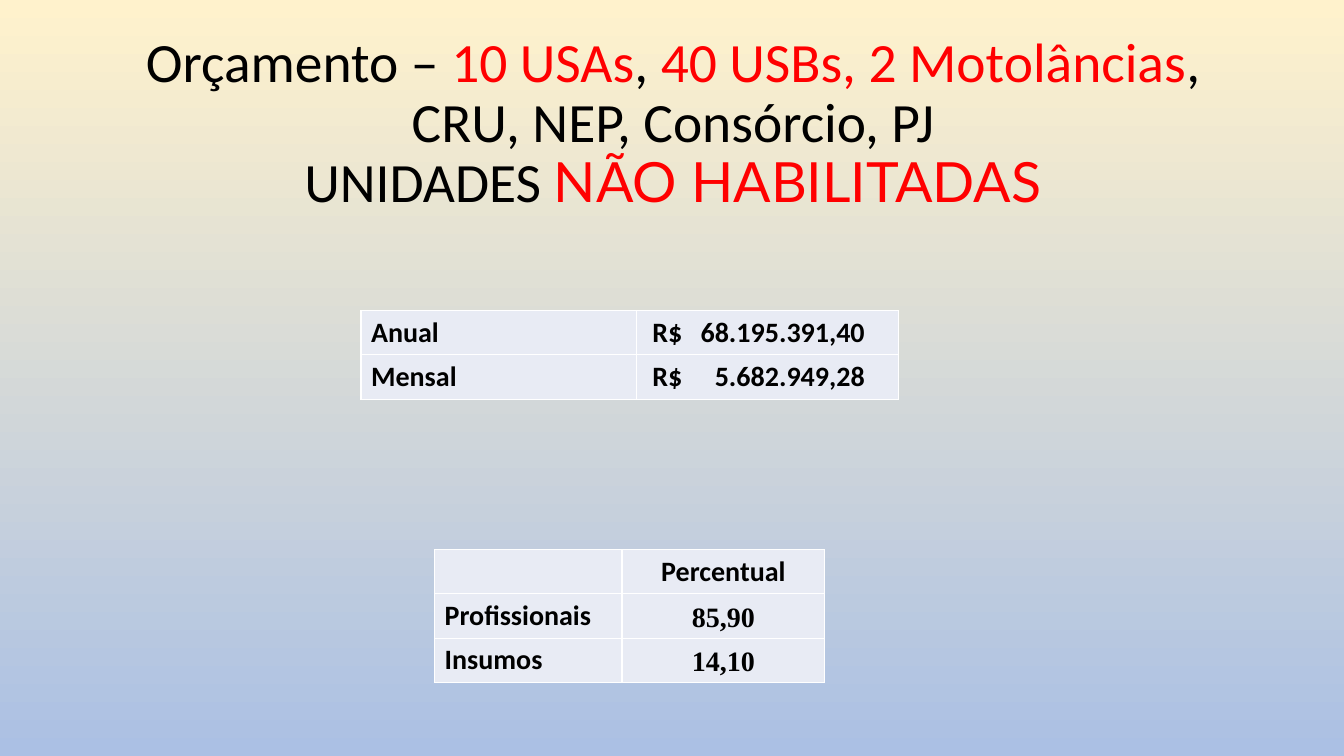
from lxml.etree import SubElement
from pptx import Presentation
from pptx.dml.color import RGBColor
from pptx.enum.text import MSO_ANCHOR, MSO_AUTO_SIZE, PP_ALIGN
from pptx.oxml.ns import qn
from pptx.util import Inches, Pt

BLACK = RGBColor(0x00, 0x00, 0x00)
RED = RGBColor(0xFF, 0x00, 0x00)
WHITE = RGBColor(0xFF, 0xFF, 0xFF)
CELL_FILL = RGBColor(0xE8, 0xEB, 0xF4)
SKY = RGBColor(0xFF, 0xF2, 0xCC)
GROUND = RGBColor(0xAB, 0xC0, 0xE4)

ROW_HEIGHT = 0.44
CURRENCY_INSET = 0.16
AMOUNT_STOP = 2.11


def add_text(paragraph, text, size=20, font="Calibri", color=BLACK, bold=False):
    """Append one formatted run to a paragraph."""
    run = paragraph.add_run()
    run.text = text
    run.font.size = Pt(size)
    run.font.name = font
    run.font.color.rgb = color
    run.font.bold = bold


def paint_background(slide):
    """Fill the slide from top to bottom with a gradient."""
    fill = slide.background.fill
    fill.gradient()
    fill.gradient_angle = 270
    for stop, color, position in zip(fill.gradient_stops, (SKY, GROUND), (0, 1)):
        stop.color.rgb = color
        stop.position = position


def fill_title(title, left, top, width, height):
    """Place the title and write its two-coloured heading."""
    title.left, title.top = Inches(left), Inches(top)
    title.width, title.height = Inches(width), Inches(height)
    frame = title.text_frame
    frame.word_wrap = True
    frame.auto_size = MSO_AUTO_SIZE.NONE
    frame.vertical_anchor = MSO_ANCHOR.MIDDLE
    heading = frame.paragraphs[0]
    heading.alignment = PP_ALIGN.CENTER
    heading.line_spacing = 0.9
    for text, color in (
        ("Orçamento – ", BLACK),
        ("10 USAs", RED),
        (", ", BLACK),
        ("40 USBs, 2 Motolâncias", RED),
        (", CRU, NEP, Consórcio, PJ", BLACK),
    ):
        add_text(heading, text, size=39.6, color=color)
    heading.add_line_break()
    add_text(heading, "UNIDADES ", size=39.6)
    add_text(heading, "NÃO HABILITADAS", size=39.6, font="Lato", color=RED)


def style_cell(cell):
    """Give a cell its white borders, fill and bottom anchor."""
    properties = cell._tc.get_or_add_tcPr()
    for side in ("lnL", "lnR", "lnT", "lnB"):
        border = SubElement(properties, qn(f"a:{side}"), w=str(Pt(0.96)))
        paint = SubElement(border, qn("a:solidFill"))
        SubElement(paint, qn("a:srgbClr"), val=str(WHITE))
    cell.fill.solid()
    cell.fill.fore_color.rgb = CELL_FILL
    cell.vertical_anchor = MSO_ANCHOR.BOTTOM


def add_grid(slide, left, top, widths, rows):
    """Add a styled table with bold labels and return it."""
    grid = slide.shapes.add_table(
        len(rows), len(widths), Inches(left), Inches(top),
        Inches(sum(widths)), Inches(ROW_HEIGHT * len(rows)),
    ).table
    grid.first_row = grid.horz_banding = False
    for column, width in zip(grid.columns, widths):
        column.width = Inches(width)
    for r, row in enumerate(rows):
        grid.rows[r].height = Inches(ROW_HEIGHT)
        for c, text in enumerate(row):
            cell = grid.cell(r, c)
            style_cell(cell)
            if text:
                font = "Times New Roman" if text[0].isdigit() else "Calibri"
                add_text(cell.text_frame.paragraphs[0], text, font=font, bold=True)
    return grid


def add_shares(slide, left, top):
    """Add the table of percentages with a centred value column."""
    shares = add_grid(slide, left, top, (1.86, 2.01), (
        ("", "Percentual"),
        ("Profissionais", "85,90"),
        ("Insumos", "14,10"),
    ))
    for row in shares.rows:
        row.cells[1].text_frame.paragraphs[0].alignment = PP_ALIGN.CENTER


def add_budget(slide, left, top):
    """Add the table of amounts, aligned right on a tab stop."""
    budget = add_grid(slide, left, top, (2.73, 2.6), (
        ("Anual", "R$\t68.195.391,40"),
        ("Mensal", "R$\t5.682.949,28"),
    ))
    for row in budget.rows:
        amount = row.cells[1]
        amount.margin_left = Inches(CURRENCY_INSET)
        properties = amount.text_frame.paragraphs[0]._p.get_or_add_pPr()
        stops = SubElement(properties, qn("a:tabLst"))
        SubElement(stops, qn("a:tab"), pos=str(Inches(AMOUNT_STOP)), algn="r")


def main():
    """Build and save the budget slide."""
    deck = Presentation()
    deck.slide_width, deck.slide_height = Inches(13.33), Inches(7.5)
    slide = deck.slides.add_slide(deck.slide_layouts[5])
    paint_background(slide)
    fill_title(slide.shapes.title, 1.04, 0.4, 11.27, 1.67)
    add_shares(slide, 4.31, 5.45)
    add_budget(slide, 3.58, 3.08)
    deck.save("out.pptx")


if __name__ == "__main__":
    main()
